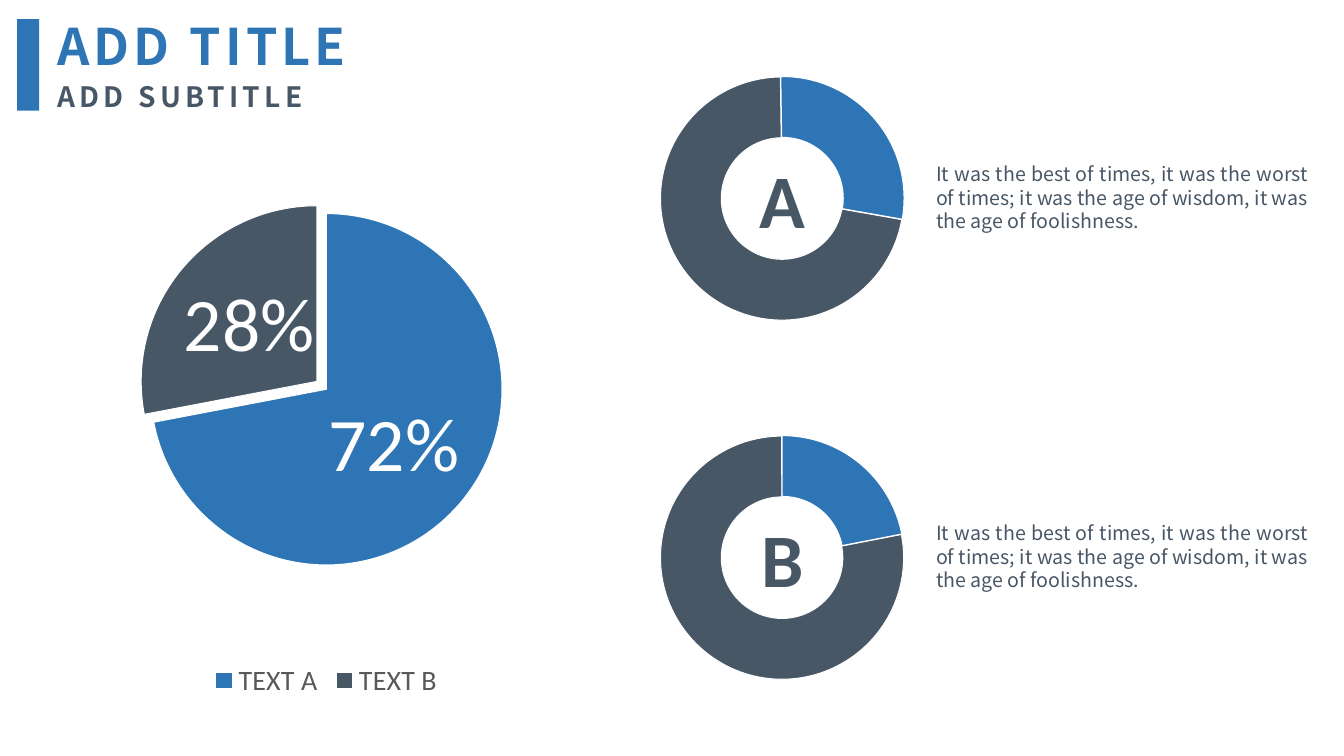
from lxml.etree import SubElement
from pptx import Presentation
from pptx.chart.data import CategoryChartData
from pptx.dml.color import RGBColor
from pptx.enum.chart import XL_CHART_TYPE as ChartType, XL_LABEL_POSITION as LabelPos, XL_LEGEND_POSITION as LegendPos
from pptx.enum.shapes import MSO_SHAPE as Preset
from pptx.enum.text import MSO_ANCHOR as Anchor, MSO_AUTO_SIZE as AutoSize, PP_ALIGN as Align
from pptx.oxml.ns import qn
from pptx.util import Cm, Pt

BLUE = RGBColor(0x2E, 0x75, 0xB6)
SLATE = RGBColor(0x48, 0x57, 0x66)
GREY = RGBColor(0x59, 0x59, 0x59)
WHITE = RGBColor(0xFF, 0xFF, 0xFF)
BODY_FONT, CHART_FONT = "Noto Sans CJK SC", "Calibri"

# Content
TITLE, SUBTITLE = "ADD TITLE", "ADD SUBTITLE"
SHARES = {"TEXT A": 72, "TEXT B": 28}
QUOTE = ("It was the best of times, it was the worst of times; "
         "it was the age of wisdom, it was the age of foolishness.")
RINGS = [  # letter, values, start angle, text
    ("A", {"1": 72, "2": 28}, 100, QUOTE),
    ("B", {"1": 78, "2": 22}, 79, QUOTE),
]

# Places in cm
RING_TOP, RING_STEP = 1.6, 9.05
LETTER_DROP, QUOTE_DROP = 2.12, 2.36


def write(box, text, size, color=SLATE, font=BODY_FONT, bold=False,
          align=Align.LEFT, spacing=0):
    frame = box.text_frame
    frame.word_wrap = True
    frame.auto_size = AutoSize.NONE
    frame.vertical_anchor = Anchor.TOP
    line = frame.paragraphs[0]
    line.alignment = align
    line.space_before = Pt(0)
    run = line.add_run()
    run.text = text
    run.font.size, run.font.bold = Pt(size), bold
    run.font.name, run.font.color.rgb = font, color
    props = run.font._element
    SubElement(props, qn("a:ea")).set("typeface", font)
    if spacing:
        props.set("spc", str(spacing * 100))


def place(box, left, top, width, height):
    box.left, box.top, box.width, box.height = map(Cm, (left, top, width, height))


def add_round_chart(slide, kind, values, colors, place_cm, plot_area, explosion):
    """Add a pie or ring whose last slice is pulled out by explosion percent."""
    data = CategoryChartData()
    data.categories = list(values)
    data.add_series("Series 1", list(values.values()))
    chart = slide.shapes.add_chart(kind, *map(Cm, place_cm), data).chart
    chart.has_title = chart.has_legend = False
    chart.font.name, chart.font.size = CHART_FONT, Pt(10)
    plot = chart.plots[0]
    plot.vary_by_categories = True
    series = plot.series[0]
    for index, color in enumerate(colors):
        slice_format = series.points[index].format
        slice_format.fill.solid()
        slice_format.fill.fore_color.rgb = color
        slice_format.line.color.rgb = WHITE
        slice_format.line.width = Pt(0.75)
    last_slice = series._element.findall(qn("c:dPt"))[-1]
    pull = last_slice.makeelement(qn("c:explosion"), {"val": str(explosion)})
    last_slice.find(qn("c:spPr")).addprevious(pull)

    # Fixed plot area
    area = chart._chartSpace.chart.plotArea
    for old in area.findall(qn("c:layout")):
        area.remove(old)
    layout = area.makeelement(qn("c:layout"), {})
    area.insert(0, layout)
    manual = SubElement(layout, qn("c:manualLayout"))
    settings = [("layoutTarget", "inner"), ("xMode", "edge"), ("yMode", "edge"),
                *zip("xywh", plot_area)]
    for tag, value in settings:
        SubElement(manual, qn(f"c:{tag}")).set("val", str(value))
    return chart


prs = Presentation()
prs.slide_width, prs.slide_height = Cm(33.87), Cm(19.05)
slide = prs.slides.add_slide(prs.slide_layouts[0])

# Heading
title, subtitle = slide.placeholders
place(title, 1.19, 0.25, 8.81, 1.8)
write(title, TITLE, 36, color=BLUE, bold=True, spacing=3)
place(subtitle, 1.19, 1.88, 7.29, 1.12)
write(subtitle, SUBTITLE, 20, bold=True, spacing=3)
accent = slide.shapes.add_shape(Preset.RECTANGLE, Cm(0.43), Cm(0.48), Cm(0.56), Cm(2.31))
accent.shadow.inherit = False
accent.fill.solid()
accent.fill.fore_color.rgb = BLUE
accent.line.fill.background()

# Share pie with legend
pie = add_round_chart(slide, ChartType.PIE, SHARES, (BLUE, SLATE),
                      (-1.4, 4.42, 19.25, 13.31), (0.27, 0.07, 0.46, 0.67), 7)
pie.has_legend = True
legend = pie.legend
legend.position, legend.include_in_layout = LegendPos.BOTTOM, False
legend.font.name, legend.font.size, legend.font.color.rgb = CHART_FONT, Pt(20), GREY
labels = pie.plots[0].series[0].data_labels
labels.show_percentage, labels.show_value = True, False
labels.number_format, labels.number_format_is_linked = "0%", False
labels.position = LabelPos.CENTER
labels.font.name, labels.font.size, labels.font.color.rgb = CHART_FONT, Pt(54), WHITE

# Lettered rings with their texts
for row, (letter, values, start, text) in enumerate(RINGS):
    top = RING_TOP + row * RING_STEP
    ring = add_round_chart(slide, ChartType.DOUGHNUT, values, (SLATE, BLUE),
                           (14.35, top, 10.72, 6.81), (0.21, 0.05, 0.58, 0.9), 1)
    doughnut = ring.plots[0]._element
    for tag, value in (("firstSliceAng", start), ("holeSize", 55)):
        doughnut.find(qn(f"c:{tag}")).set("val", str(value))
    center = slide.shapes.add_textbox(Cm(18.47), Cm(top + LETTER_DROP), Cm(2.49), Cm(2.57))
    write(center, letter, 54, font=CHART_FONT, bold=True, align=Align.CENTER)
    quote = slide.shapes.add_textbox(Cm(23.34), Cm(top + QUOTE_DROP), Cm(9.88), Cm(2.06))
    write(quote, text, 14, align=Align.JUSTIFY)

prs.save("out.pptx")
